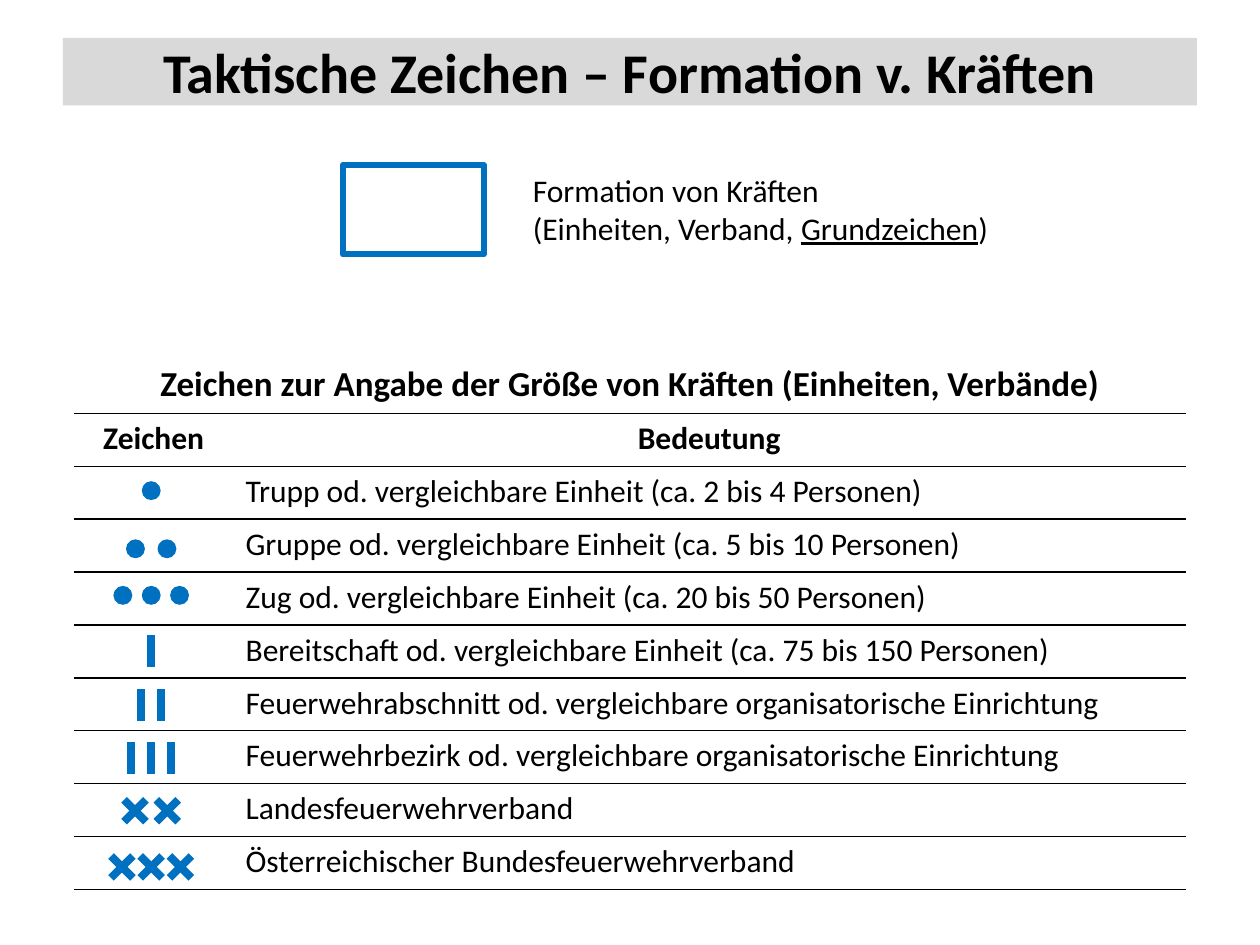
"""Build the slide on tactical signs for formations of forces."""
from dataclasses import dataclass
from typing import Any

from lxml import etree
from pptx import Presentation
from pptx.dml.color import RGBColor
from pptx.enum import shapes, text
from pptx.oxml import ns
from pptx.util import Pt


@dataclass(frozen=True)
class Theme:
    font: str = "Calibri"
    ink: str = "000000"
    blue: str = "0070C0"
    grey: str = "D9D9D9"
    paper: str = "FFFFFF"
    title: float = 32
    heading: float = 20
    body: float = 18
    rule: float = 1
    frame: float = 3.5
    stroke: float = 4.5


@dataclass(frozen=True)
class Box:
    x: float
    y: float
    w: float
    h: float

    def pts(self) -> tuple:
        return Pt(self.x), Pt(self.y), Pt(self.w), Pt(self.h)


@dataclass(frozen=True)
class Sign:
    kind: str
    count: int
    y: float
    gap: float
    meaning: str


T = Theme()
SIGN_X, DOT, BAR, CROSS = 86.4, 10.8, 18, 12.5
COLUMNS = (90.7, 544.3)
HEAD_ROW, ROW = 32.4, 30.24
TABLE = Box(42.5, 203.8, sum(COLUMNS), HEAD_ROW + 9 * ROW)
HEADING = "Zeichen zur Angabe der Größe von Kräften (Einheiten, Verbände)"
SIGNS = (
    Sign("dot", 1, 280.4, 0, "Trupp od. vergleichbare Einheit (ca. 2 bis 4 Personen)"),
    Sign("dot", 2, 313.6, 18, "Gruppe od. vergleichbare Einheit (ca. 5 bis 10 Personen)"),
    Sign("dot", 3, 340.2, 16.2, "Zug od. vergleichbare Einheit (ca. 20 bis 50 Personen)"),
    Sign("bar", 1, 371.9, 0, "Bereitschaft od. vergleichbare Einheit (ca. 75 bis 150 Personen)"),
    Sign("bar", 2, 402.8, 11.3, "Feuerwehrabschnitt od. vergleichbare organisatorische Einrichtung"),
    Sign("bar", 3, 433.1, 11.3, "Feuerwehrbezirk od. vergleichbare organisatorische Einrichtung"),
    Sign("cross", 2, 463.3, 18.4, "Landesfeuerwehrverband"),
    Sign("cross", 3, 495.4, 16.7, "Österreichischer Bundesfeuerwehrverband"),
)


def apply(obj: Any, values: dict) -> None:
    for name, value in values.items():
        setattr(obj, name, value)


def rgb(colour: str) -> RGBColor:
    return RGBColor.from_string(colour)


def add_run(p: Any, words: str, size: float, **extra: bool) -> None:
    r = p.add_run()
    r.text = words
    apply(r.font, {"name": T.font, "size": Pt(size), **extra})
    r.font.color.rgb = rgb(T.ink)


def add_shape(parent: Any, kind: Any, box: Box, fill: str, line: str = "") -> Any:
    sp = parent.add_shape(kind, *box.pts())
    sp.shadow.inherit = False
    sp.fill.solid()
    sp.fill.fore_color.rgb = rgb(fill)
    if line:
        sp.line.color.rgb = rgb(line)
        sp.line.width = Pt(T.frame)
    else:
        sp.line.fill.background()
    return sp


def add_stroke(parent: Any, x1: float, y1: float, x2: float, y2: float) -> None:
    c = parent.add_connector(shapes.MSO_CONNECTOR.STRAIGHT, Pt(x1), Pt(y1), Pt(x2), Pt(y2))
    c.line.color.rgb = rgb(T.blue)
    c.line.width = Pt(T.stroke)
    etree.SubElement(c._element.spPr, ns.qn("a:effectLst"))


def add_mark(parent: Any, kind: str, x: float, y: float) -> None:
    if kind == "dot":
        box = Box(x - DOT / 2, y - DOT / 2, DOT, DOT)
        add_shape(parent, shapes.MSO_SHAPE.OVAL, box, T.blue)
    elif kind == "bar":
        add_stroke(parent, x, y - BAR / 2, x, y + BAR / 2)
    else:
        d = CROSS / 2
        for side in (d, -d):
            add_stroke(parent, x + side, y - d, x - side, y + d)


def add_sign(s: Any, sign: Sign) -> None:
    parent = s.shapes.add_group_shape().shapes if sign.count > 1 else s.shapes
    for i in range(sign.count):
        add_mark(parent, sign.kind, SIGN_X + (i - (sign.count - 1) / 2) * sign.gap, sign.y)


def add_border(cell: Any, side: str) -> None:
    ln = etree.SubElement(cell._tc.get_or_add_tcPr(), ns.qn(f"a:{side}"), w=str(Pt(T.rule)))
    fill = etree.SubElement(ln, ns.qn("a:solidFill"))
    etree.SubElement(fill, ns.qn("a:srgbClr"), val=T.ink)


def fill_cell(cell: Any, words: str, size: float, bold: bool) -> None:
    p = cell.text_frame.paragraphs[0]
    p.alignment = text.PP_ALIGN.CENTER if bold else text.PP_ALIGN.LEFT
    p.font.size = Pt(size)
    if words:
        add_run(p, words, size, bold=bold)


def add_sign_table(s: Any) -> None:
    rows = [(HEADING, ""), ("Zeichen", "Bedeutung"), *(("", sign.meaning) for sign in SIGNS)]
    frame = s.shapes.add_table(len(rows), len(COLUMNS), *TABLE.pts())
    table = frame.table
    apply(table, {"first_row": False, "horz_banding": False})
    style = table._tbl.tblPr.find(ns.qn("a:tableStyleId"))
    style.text = "{2D5ABB26-0587-4C30-8999-92F81FD0307C}"
    for column, width in zip(table.columns, COLUMNS):
        column.width = Pt(width)
    for i, row in enumerate(rows):
        table.rows[i].height = Pt(ROW if i else HEAD_ROW)
        for j, words in enumerate(row):
            cell = table.cell(i, j)
            fill_cell(cell, words, T.body if i else T.heading, i < 2)
            for side in ("lnT", "lnB") if i else ("lnB",):
                add_border(cell, side)
            cell.fill.background()
    table.cell(0, 0).merge(table.cell(0, 1))


def add_title(s: Any) -> None:
    sp = add_shape(s.shapes, shapes.MSO_SHAPE.RECTANGLE, Box(36, 21.6, 648, 38.6), T.grey)
    tf = sp.text_frame
    apply(tf, {"word_wrap": True, "vertical_anchor": text.MSO_ANCHOR.MIDDLE})
    p = tf.paragraphs[0]
    p.alignment = text.PP_ALIGN.CENTER
    add_run(p, "Taktische Zeichen – Formation v. Kräften", T.title, bold=True)


def add_base_sign(s: Any) -> None:
    box = Box(195.8, 94.3, 80.6, 51.1)
    add_shape(s.shapes, shapes.MSO_SHAPE.RECTANGLE, box, T.paper, T.blue)
    tf = s.shapes.add_textbox(*Box(297.4, 94.3, 277.9, 51.1).pts()).text_frame
    apply(tf, {"word_wrap": False, "auto_size": text.MSO_AUTO_SIZE.SHAPE_TO_FIT_TEXT})
    p = tf.paragraphs[0]
    add_run(p, "Formation von Kräften", T.body)
    p.add_line_break()
    add_run(p, "(Einheiten, Verband, ", T.body)
    add_run(p, "Grundzeichen", T.body, underline=True)
    add_run(p, ")", T.body)


def main() -> None:
    prs = Presentation()
    apply(prs, {"slide_width": Pt(720), "slide_height": Pt(540)})
    s = prs.slides.add_slide(prs.slide_layouts[6])
    add_title(s)
    add_base_sign(s)
    add_sign_table(s)
    for sign in SIGNS:
        add_sign(s, sign)
    prs.save("out.pptx")


if __name__ == "__main__":
    main()
